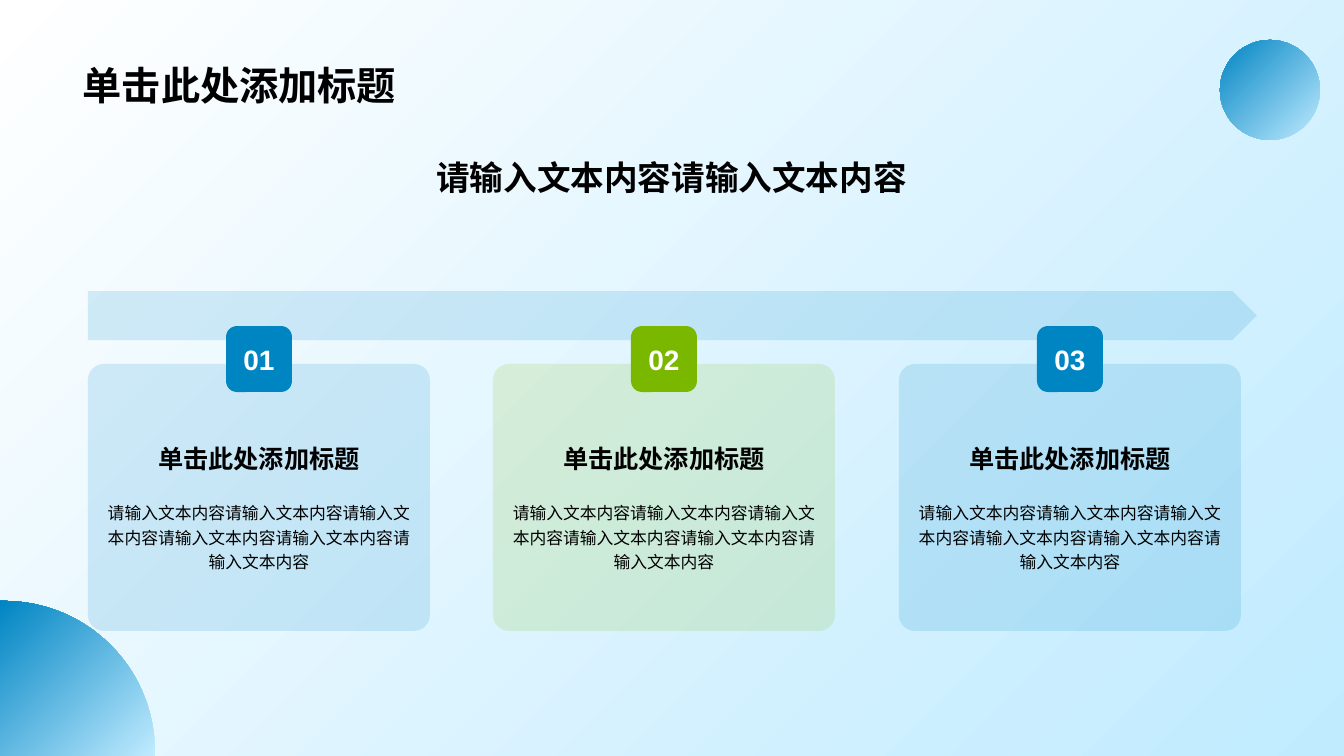
import math

from pptx import Presentation
from pptx import util as u
from pptx.dml.color import RGBColor
from pptx.enum import shapes, text
from pptx.oxml import parse_xml
from pptx.oxml.ns import nsdecls

EMU_PER_INCH = 914400
PX_PER_INCH = 100.8
WIDTH, HEIGHT = 1344, 756

BLUE = RGBColor(0x00, 0x85, 0xC3)
GREEN = RGBColor(0x7A, 0xB8, 0x00)
PALE = RGBColor(0xC0, 0xEB, 0xFF)
WHITE = RGBColor(0xFF, 0xFF, 0xFF)
BLACK = RGBColor(0x00, 0x00, 0x00)

HEADING = "单击此处添加标题"
SUBHEADING = "请输入文本内容请输入文本内容"
BODY = "请输入文本内容" * 6

STEPS = [("01", BLUE), ("02", GREEN), ("03", BLUE)]
FIRST_LEFT, LAST_OFFSET = 88, 811
CENTER, BOTTOM = text.MSO_ANCHOR.MIDDLE, text.MSO_ANCHOR.BOTTOM
SHAPE = shapes.MSO_SHAPE


def px(value):
    return u.Emu(round(value * EMU_PER_INCH / PX_PER_INCH))


def set_gradient(fill, end_color):
    fill.gradient()
    fill.gradient_angle = 135
    for stop, color in zip(fill.gradient_stops, (PALE, end_color)):
        stop.color.rgb = color


def set_solid(shape, color, opacity=100):
    shape.fill.solid()
    shape.fill.fore_color.rgb = color
    if opacity < 100:
        tint = shape.fill._xPr.solidFill.srgbClr
        tint.append(parse_xml(f'<a:alpha {nsdecls("a")} val="{opacity * 1000}"/>'))


def strip_outline(shape):
    shape.shadow.inherit = False
    shape.line.fill.background()


def add_preset(slide, kind, box, corner=None):
    shape = slide.shapes.add_shape(kind, *map(px, box))
    strip_outline(shape)
    if corner is not None:
        shape.adjustments[0] = corner
    return shape


def write(shape, words, size, color=BLACK, bold=True, anchor=CENTER,
          align=text.PP_ALIGN.CENTER, spacing=None, **margins):
    frame = shape.text_frame
    frame_format = {"word_wrap": True, "vertical_anchor": anchor, **margins}
    for name, value in frame_format.items():
        setattr(frame, name, value)
    paragraph = frame.paragraphs[0]
    paragraph.text = words
    paragraph.alignment = align
    if spacing:
        paragraph.line_spacing = spacing
    font_format = {"name": "Arial", "size": u.Pt(size), "bold": bold}
    for name, value in font_format.items():
        setattr(paragraph.runs[0].font, name, value)
    paragraph.runs[0].font.color.rgb = color


def add_label(slide, box, words, size, **options):
    write(slide.shapes.add_textbox(*map(px, box)), words, size, **options)


def add_corner_arc(slide, center_x, center_y, radius):
    """Draw the part of a circle that fits in the bottom left corner."""
    arc = []
    for degrees in range(90, -1, -2):
        angle = math.radians(degrees)
        arc.append((px(center_x + radius * math.cos(angle)),
                    px(center_y - radius * math.sin(angle))))
    top = px(center_y - radius)
    builder = slide.shapes.build_freeform(0, top)
    builder.add_line_segments(
        arc + [(px(center_x + radius), px(HEIGHT)), (0, px(HEIGHT))], close=True)
    corner = builder.convert_to_shape()
    strip_outline(corner)
    set_gradient(corner.fill, BLUE)


def add_step(slide, left, number, color):
    card = add_preset(slide, SHAPE.ROUNDED_RECTANGLE, (left, 364, 342, 267), 0.06)
    set_solid(card, color, 15)
    write(card, BODY, 12, bold=False, spacing=1.2,
          margin_top=px(76), margin_bottom=0)
    add_label(slide, (left + 55, 432, 232, 52), HEADING, 18)
    badge = add_preset(slide, SHAPE.ROUNDED_RECTANGLE, (left + 138, 326, 66, 66))
    set_solid(badge, color)
    write(badge, number, 20, color=WHITE)


def main():
    deck = Presentation()
    deck.slide_width, deck.slide_height = px(WIDTH), px(HEIGHT)
    slide = deck.slides.add_slide(deck.slide_layouts[6])

    # Background and decorative circles
    set_gradient(slide.background.fill, WHITE)
    add_corner_arc(slide, 4, 752, 151)
    circle = add_preset(slide, SHAPE.OVAL, (1220, 40, 100, 100))
    set_gradient(circle.fill, BLUE)

    # Headings
    add_label(slide, (73, 14, 1198, 99), HEADING, 28,
              anchor=BOTTOM, align=text.PP_ALIGN.LEFT)
    add_label(slide, (215, 125, 913, 77), SUBHEADING, 24, anchor=BOTTOM)

    # Timeline arrow
    arrow = add_preset(slide, SHAPE.PENTAGON, (FIRST_LEFT, 291, 1169, 49))
    set_solid(arrow, BLUE, 15)

    # Evenly spaced steps
    for index, (number, color) in enumerate(STEPS):
        left = FIRST_LEFT + index * LAST_OFFSET // (len(STEPS) - 1)
        add_step(slide, left, number, color)

    deck.save("out.pptx")


if __name__ == "__main__":
    main()
